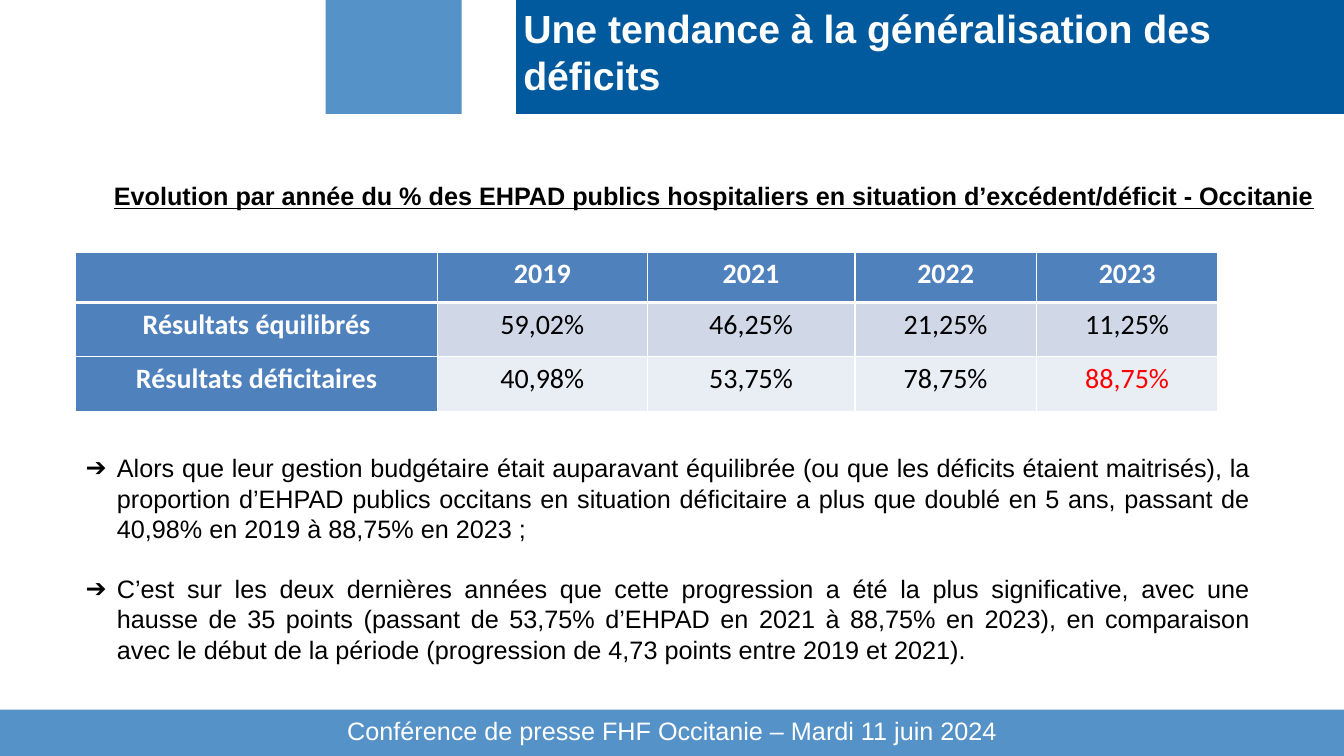
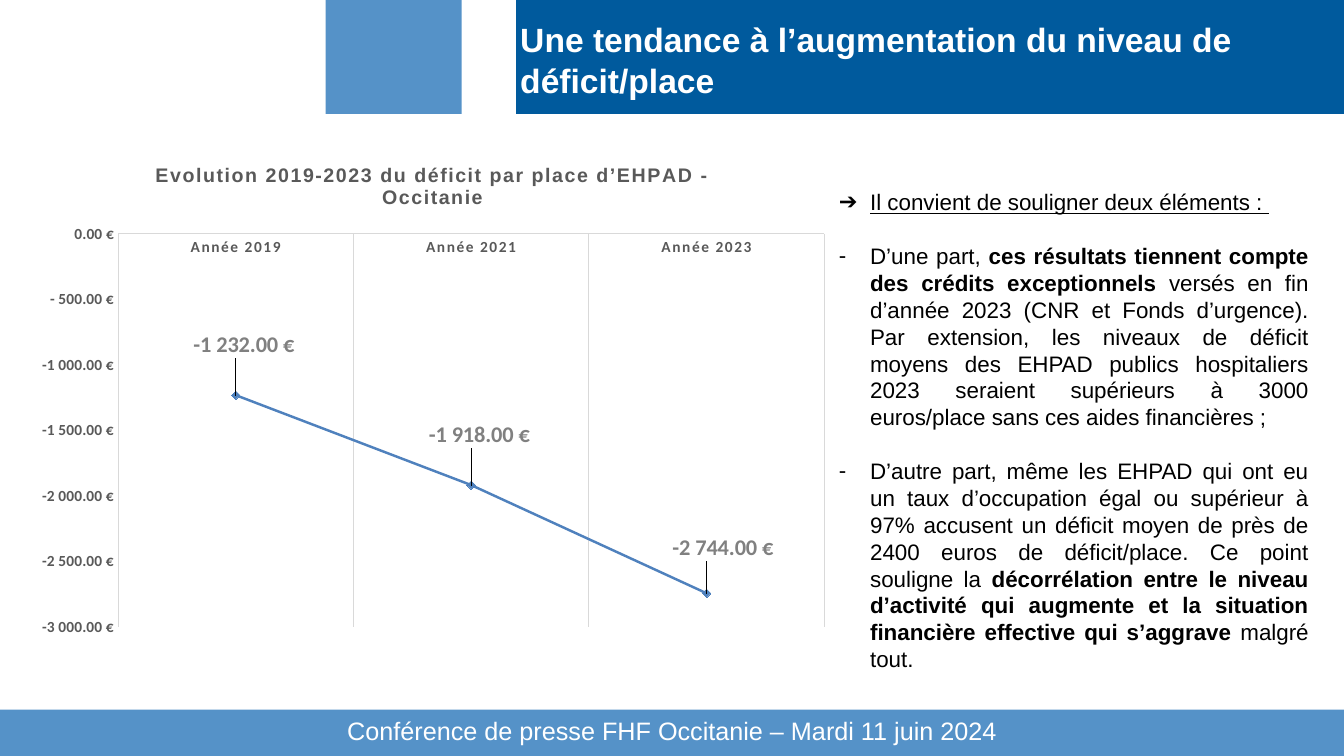
from dataclasses import dataclass

from lxml import etree
from pptx import Presentation
from pptx.chart.data import CategoryChartData
from pptx.dml.color import RGBColor
from pptx.enum import chart as charts, shapes, text
from pptx.oxml import parse_xml
from pptx.oxml.ns import nsdecls, qn
from pptx.util import Inches, Pt


@dataclass(frozen=True)
class Theme:
    font: str = "Arial"
    data_font: str = "Calibri"
    white: str = "FFFFFF"
    black: str = "000000"
    navy: str = "005A9D"
    sky: str = "5592C8"
    accent: str = "4F81BD"
    alert: str = "FF0000"
    grid: str = "D9D9D9"
    axis_text: str = "595959"
    label_text: str = "808080"
    row_fills: tuple = ("D0D8E8", "E9EDF4")
    body_size: int = 18
    table_size: int = 20
    axis_size: int = 11
    chart_title_size: int = 14
    label_size: int = 16
    euro_format: str = '#\\ ##0.00\\ "€"'


WIDTH, HEIGHT = 13.33, 7.5
FOOTER = "Conférence de presse FHF Occitanie – Mardi 11 juin 2024"
BANDS = [
    (0, 7.04, WIDTH, 0.46, "sky"),
    (5.12, 0, 8.21, 1.13, "navy"),
    (3.23, 0, 1.35, 1.13, "sky"),
]


def inches(*lengths):
    return [Inches(length) for length in lengths]


def color(value):
    return RGBColor.from_string(value)


def style_font(font, name, size, fill, bold=False, underline=None):
    font.name, font.size, font.bold = name, Pt(size), bold
    font.color.rgb = color(fill)
    if underline:
        font.underline = True


def set_margins(frame, margin):
    frame.margin_left = frame.margin_right = Inches(margin)
    frame.margin_top = frame.margin_bottom = Inches(margin)


def add_bullet(para, mark):
    props = para._p.get_or_add_pPr()
    props.set("marL", str(Inches(0.31)))
    props.set("indent", str(Inches(-0.31)))
    etree.SubElement(props, qn("a:buFont")).set("typeface", "Arial")
    etree.SubElement(props, qn("a:buChar")).set("char", mark)


def set_cell_borders(cell, fill, bottom):
    """Add the four border lines, which precede the cell's fill."""
    props = cell._tc.get_or_add_tcPr()
    sides = {"lnL": 1, "lnR": 1, "lnT": 1, "lnB": bottom}
    for index, (side, width) in enumerate(sides.items()):
        line = parse_xml(
            f'<a:{side} {nsdecls("a")} w="{Pt(width)}"><a:solidFill>'
            f'<a:srgbClr val="{fill}"/></a:solidFill></a:{side}>')
        props.insert(index, line)


def manual_layout(x, y, size=None):
    """Return a chart layout; with a size it places the inner plot area."""
    values = {"x": x, "y": y}
    modes = ""
    if size:
        values.update(w=size[0], h=size[1])
        modes = ('<c:layoutTarget val="inner"/><c:xMode val="edge"/>'
                 '<c:yMode val="edge"/>')
    marks = "".join(f'<c:{key} val="{value}"/>' for key, value in values.items())
    return parse_xml(f'<c:layout {nsdecls("c")}><c:manualLayout>{modes}{marks}'
                     '</c:manualLayout></c:layout>')


class Deck:
    def __init__(self, theme):
        self.theme = theme
        self.deck = Presentation()
        self.deck.slide_width, self.deck.slide_height = inches(WIDTH, HEIGHT)
        self.page = None

    def add_page(self, title, box, size):
        """Start a slide with its bands, title and footer."""
        theme = self.theme
        self.page = self.deck.slides.add_slide(self.deck.slide_layouts[1])
        holder = self.page.shapes.title
        for *place, fill in BANDS:
            band = self.page.shapes.add_shape(
                shapes.MSO_SHAPE.RECTANGLE, *inches(*place))
            band.shadow.inherit = False
            band.fill.solid()
            band.fill.fore_color.rgb = color(getattr(theme, fill))
            band.line.fill.background()
            holder.element.addprevious(band.element)
        self.place(holder, box)
        frame = holder.text_frame
        set_margins(frame, 0)
        frame.text = title
        para = frame.paragraphs[0]
        para.alignment = text.PP_ALIGN.LEFT
        for span in para.runs:
            style_font(span.font, theme.font, size, theme.white, bold=True)
        footer = self.add_text(FOOTER, (2.74, 7.11, 7.85, 0.29), theme.white)
        set_margins(footer.text_frame, 0)
        footer.text_frame.paragraphs[0].line_spacing = Pt(20.9)

    def place(self, holder, box):
        holder.left, holder.top, holder.width, holder.height = inches(*box)
        frame = holder.text_frame
        frame.word_wrap = True
        frame.auto_size = text.MSO_AUTO_SIZE.NONE
        frame.vertical_anchor = text.MSO_ANCHOR.TOP

    def add_text(self, words, box, fill, **style):
        """Add one centred line in a text box."""
        shape = self.page.shapes.add_textbox(*inches(*box))
        frame = shape.text_frame
        frame.word_wrap = True
        frame.text = words
        para = frame.paragraphs[0]
        para.alignment = text.PP_ALIGN.CENTER
        style_font(para.runs[0].font, self.theme.font, self.theme.body_size,
                   fill, **style)
        return shape

    def add_list(self, items, box, size, gap):
        """Fill the body with (mark, alignment, spans); a span has a style."""
        holder = self.page.placeholders[1]
        self.place(holder, box)
        frame = holder.text_frame
        for index, (mark, alignment, spans) in enumerate(items):
            para = frame.add_paragraph() if index else frame.paragraphs[0]
            add_bullet(para, mark)
            para.alignment = alignment
            para.space_before = Pt(gap if index else 0)
            for words, style in spans:
                span = para.add_run()
                span.text = words
                style_font(span.font, self.theme.font, size, self.theme.black,
                           bold=style == "bold", underline=style == "underline")

    def add_table(self, rows, box, widths, heights, alerts):
        theme = self.theme
        table = self.page.shapes.add_table(
            len(rows), len(widths), *inches(*box)).table
        for column, width in zip(table.columns, widths):
            column.width = Inches(width)
        for r, (values, height) in enumerate(zip(rows, heights)):
            table.rows[r].height = Inches(height)
            for c, value in enumerate(values):
                heading = r == 0 or c == 0
                cell = table.cell(r, c)
                cell.margin_left = cell.margin_right = Inches(0.07)
                cell.margin_top = cell.margin_bottom = 0
                cell.fill.solid()
                cell.fill.fore_color.rgb = color(
                    theme.accent if heading else theme.row_fills[r - 1])
                set_cell_borders(cell, theme.white, 1 if r else 3)
                cell.text = value
                para = cell.text_frame.paragraphs[0]
                para.alignment = text.PP_ALIGN.CENTER
                para.line_spacing, para.space_after = 1.15, Pt(8)
                fill = theme.white if heading else theme.black
                if value in alerts:
                    fill = theme.alert
                for span in para.runs:
                    style_font(span.font, theme.data_font, theme.table_size,
                               fill, bold=heading)

    def add_line_chart(self, title, values, box, offsets):
        theme = self.theme
        data = CategoryChartData(number_format=theme.euro_format)
        data.categories = list(values)
        data.add_series("Series 1", list(values.values()))
        chart = self.page.shapes.add_chart(
            charts.XL_CHART_TYPE.LINE_MARKERS, *inches(*box), data).chart
        style_font(chart.font, theme.data_font, 10, theme.black)
        chart.has_legend = False
        chart.has_title = True
        chart.chart_title.include_in_layout = False
        frame = chart.chart_title.text_frame
        frame.text = title
        span = frame.paragraphs[0].runs[0]
        style_font(span.font, theme.font, theme.chart_title_size,
                   theme.axis_text, bold=True)
        span._r.get_or_add_rPr().set("spc", "100")
        self.style_axes(chart)
        self.style_series(chart, offsets)
        plot_area = chart.element.xpath("//c:plotArea")[0]
        for old in plot_area.findall(qn("c:layout")):
            plot_area.remove(old)
        plot_area.insert(0, manual_layout(0.114, 0.18, (0.867, 0.78)))

    def style_axes(self, chart):
        theme = self.theme
        for axis in (chart.category_axis, chart.value_axis):
            axis.major_tick_mark = axis.minor_tick_mark = charts.XL_TICK_MARK.NONE
            style_font(axis.tick_labels.font, theme.data_font, theme.axis_size,
                       theme.axis_text, bold=True)
            axis.has_major_gridlines = axis is chart.category_axis
            axis.format.line.color.rgb = color(theme.grid)
            axis.format.line.width = Pt(0.75)
        categories, amounts = chart.category_axis, chart.value_axis
        categories.has_major_gridlines = True
        categories.major_gridlines.format.line.color.rgb = color(theme.grid)
        categories.major_gridlines.format.line.width = Pt(0.75)
        chart.element.xpath("//c:catAx/c:txPr//a:defRPr")[0].set("spc", "100")
        amounts.minimum_scale, amounts.maximum_scale = -3000, 0
        amounts.major_unit = 500
        amounts.tick_labels.number_format = theme.euro_format
        amounts.tick_labels.number_format_is_linked = False

    def style_series(self, chart, offsets):
        """Style the line and shift each label off its point."""
        theme = self.theme
        chart.plots[0].vary_by_categories = False
        series = chart.plots[0].series[0]
        series.smooth = False
        series.format.line.color.rgb = color(theme.accent)
        series.format.line.width = Pt(1.75)
        marker = series.marker
        marker.style, marker.size = charts.XL_MARKER_STYLE.DIAMOND, 6
        marker.format.fill.solid()
        marker.format.fill.fore_color.rgb = color(theme.accent)
        marker.format.line.color.rgb = color(theme.accent)
        labels = series.data_labels
        labels.show_value = True
        labels.number_format = theme.euro_format
        labels.number_format_is_linked = False
        point_labels = [series.points[i].data_label for i in range(len(offsets))]
        for label in [labels, *point_labels]:
            style_font(label.font, theme.data_font, theme.label_size,
                       theme.label_text, bold=True)
            label.position = charts.XL_LABEL_POSITION.CENTER
        for element, offset in zip(chart.element.xpath("//c:dLbl"), offsets):
            number = etree.Element(qn("c:numFmt"))
            number.set("formatCode", theme.euro_format)
            number.set("sourceLinked", "0")
            element.insert(1, manual_layout(*offset))
            element.insert(2, number)


def main():
    theme = Theme()
    deck = Deck(theme)
    justify, left = text.PP_ALIGN.JUSTIFY, text.PP_ALIGN.LEFT

    deck.add_page("Une tendance à la généralisation des déficits",
                  (5.19, 0.04, 8.1, 1.09), 28)
    deck.add_text("Evolution par année du % des EHPAD publics hospitaliers en "
                  "situation d’excédent/déficit - Occitanie",
                  (0.9, 1.74, 12.36, 0.4), theme.black, bold=True, underline=True)
    deck.add_table(
        [["", "2019", "2021", "2022", "2023"],
         ["Résultats équilibrés", "59,02%", "46,25%", "21,25%", "11,25%"],
         ["Résultats déficitaires", "40,98%", "53,75%", "78,75%", "88,75%"]],
        (0.75, 2.5, 11.33, 1.58), (3.59, 2.08, 2.06, 1.8, 1.8),
        (0.5, 0.54, 0.54), alerts={"88,75%"})
    deck.add_list([
        ("➔", justify, [(
            "Alors que leur gestion budgétaire était auparavant équilibrée (ou que "
            "les déficits étaient maitrisés), la proportion d’EHPAD publics occitans "
            "en situation déficitaire a plus que doublé en 5 ans, passant de 40,98% "
            "en 2019 à 88,75% en 2023 ;", "")]),
        ("➔", justify, [(
            "C’est sur les deux dernières années que cette progression a été la plus "
            "significative, avec une hausse de 35 points (passant de 53,75% d’EHPAD "
            "en 2021 à 88,75% en 2023), en comparaison avec le début de la période "
            "(progression de 4,73 points entre 2019 et 2021).", "")]),
    ], (0.75, 4.44, 11.75, 2.22), theme.body_size, gap=21.5)

    deck.add_page("Une tendance à l’augmentation du niveau de \vdéficit/place",
                  (5.16, 0.19, 8.1, 0.81), 24)
    deck.add_line_chart(
        "Evolution 2019-2023 du déficit par place d’EHPAD - Occitanie",
        {"Année 2019": -1232, "Année 2021": -1918, "Année 2023": -2744},
        (0.25, 1.42, 8.08, 5), [(0.01, -0.1), (0.01, -0.1), (0.02, -0.09)])
    deck.add_list([
        ("➔", left, [("Il convient de souligner deux éléments : ", "underline")]),
        ("-", justify, [
            ("D’une part, ", ""),
            ("ces résultats tiennent compte des crédits exceptionnels ", "bold"),
            ("versés en fin d’année 2023 (CNR et Fonds d’urgence). Par extension, "
             "les niveaux de déficit moyens des EHPAD publics hospitaliers 2023 "
             "seraient supérieurs à 3000 euros/place sans ces aides financières ; ",
             "")]),
        ("-", justify, [
            ("D’autre part, même les EHPAD qui ont eu un taux d’occupation égal ou "
             "supérieur à 97% accusent un déficit moyen de près de 2400 euros de "
             "déficit/place. Ce point souligne la ", ""),
            ("décorrélation entre le niveau d’activité qui augmente et la situation "
             "financière effective qui s’aggrave ", "bold"),
            ("malgré tout. ", "")]),
    ], (8.22, 1.82, 4.86, 4.95), 16, gap=19.2)

    deck.deck.save("out.pptx")


if __name__ == "__main__":
    main()
